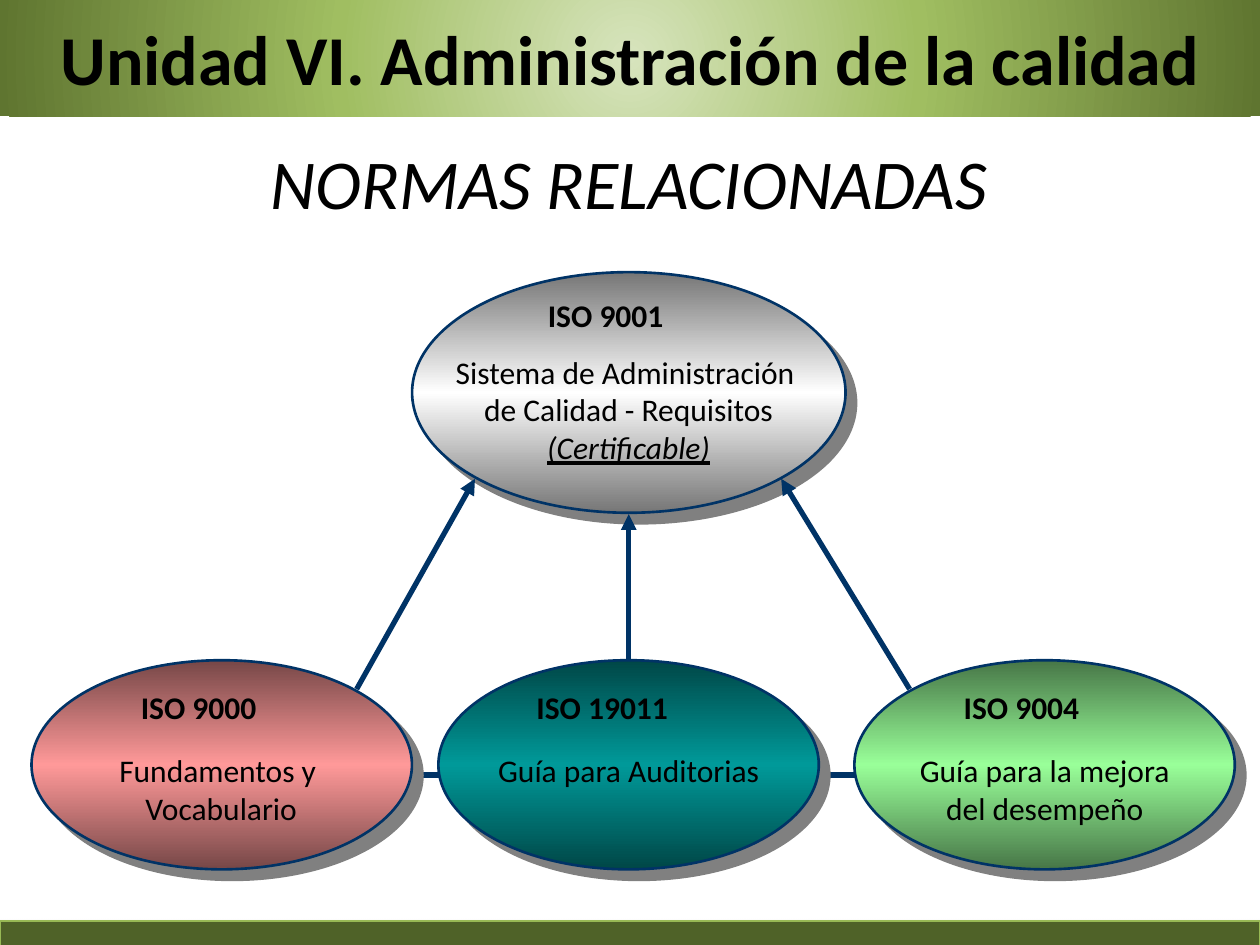
"""Build the slide on the ISO standards related to quality management."""
from dataclasses import dataclass

from pptx import Presentation
from pptx.dml.color import RGBColor
from pptx.enum.shapes import MSO_CONNECTOR, MSO_SHAPE
from pptx.enum.text import MSO_ANCHOR, PP_ALIGN
from pptx.oxml import parse_xml
from pptx.oxml.ns import nsdecls, qn
from pptx.util import Pt

Box = tuple[float, float, float, float]
Stops = tuple[tuple[int, str], ...]


@dataclass(frozen=True)
class Theme:
    font: str = "Calibri"
    text: str = "000000"
    navy: str = "003366"
    shadow: str = "808080"
    footer: str = "4F6228"
    footer_line: str = "98B955"
    banner: Stops = ((0, "D7E4BD"), (46, "A0BE61"), (100, "5F7530"))
    heading: int = 40
    body: int = 18


@dataclass(frozen=True)
class Norm:
    name: str
    lines: tuple[str, ...]
    oval: Box
    label: Box
    detail: Box
    edge: str
    middle: str
    certifiable: bool = False


T = Theme()
LINEAR = '<a:lin ang="5400000" scaled="0"/>'
RADIAL = '<a:path path="circle"><a:fillToRect l="50000" t="50000" r="50000" b="50000"/></a:path>'
OVAL_TOP, OVAL_W, OVAL_H = 377.3, 217.4, 119.5
LABEL_TOP, DETAIL_TOP = 389.5, 425.5

NORMS = (
    Norm("ISO 9001", ("Sistema de Administración ", "de Calidad - Requisitos", "(Certificable)"),
         (235.5, 155.5, 247.7, 137.5), (306, 165.6, 97, 31), (245.5, 198, 227.5, 72),
         "767676", "FFFFFF", True),
    Norm("ISO 9000", ("Fundamentos y ", "Vocabulario"),
         (18, OVAL_TOP, OVAL_W, OVAL_H), (73.4, LABEL_TOP, 97, 31),
         (56.2, DETAIL_TOP, 140.4, 50.4), "764747", "FF9999"),
    Norm("ISO 19011", ("Guía para Auditorias",),
         (250.5, OVAL_TOP, OVAL_W, OVAL_H), (299.5, LABEL_TOP, 108, 31),
         (270.7, DETAIL_TOP, 177.1, 28.8), "004747", "009999"),
    Norm("ISO 9004", ("Guía para la mejora", "del desempeño"),
         (488.2, OVAL_TOP, OVAL_W, OVAL_H), (543.6, LABEL_TOP, 97, 31),
         (512, DETAIL_TOP, 170, 50.4), "477647", "99FF99"),
)
ARROWS: tuple[Box, ...] = (
    (203.8, 393.8, 271.4, 273.6), (519.8, 393.8, 446.4, 273.6), (359.3, 376.6, 359.3, 293.8),
)


def points(values: Box) -> list[Pt]:
    """Turn four numbers into lengths in points."""
    return [Pt(v) for v in values]


def write(tf, lines: tuple[str, ...], size: int, align=PP_ALIGN.CENTER, **style: bool) -> None:
    """Write one paragraph per line in a common style."""
    tf.word_wrap = True
    for i, line in enumerate(lines):
        p = tf.paragraphs[0] if i == 0 else tf.add_paragraph()
        p.text, p.alignment = line, align
        p.font.name, p.font.size = T.font, Pt(size)
        p.font.color.rgb = RGBColor.from_string(T.text)
        for key, value in style.items():
            setattr(p.font, key, value)


def set_gradient(sp, stops: Stops, direction: str) -> None:
    """Fill a shape with a gradient of any number of stops."""
    sp.fill.background()
    gs = "".join(f'<a:gs pos="{pos * 1000}"><a:srgbClr val="{color}"/></a:gs>'
                 for pos, color in stops)
    fill = parse_xml(f'<a:gradFill {nsdecls("a")} rotWithShape="1">'
                     f'<a:gsLst>{gs}</a:gsLst>{direction}</a:gradFill>')
    spPr = sp.fill._xPr
    spPr.replace(spPr.find(qn("a:noFill")), fill)


def set_shadow(sp, color: str, alpha: int, blur: float, dist: float, angle: int) -> None:
    """Give a shape an outer shadow."""
    sp.shadow.inherit = False
    sp._element.spPr.find(qn("a:effectLst")).append(parse_xml(
        f'<a:outerShdw {nsdecls("a")} blurRad="{Pt(blur)}" dist="{Pt(dist)}" '
        f'dir="{angle * 60000}" algn="ctr" rotWithShape="0"><a:srgbClr val="{color}">'
        f'<a:alpha val="{alpha * 1000}"/></a:srgbClr></a:outerShdw>'))


def set_line(sp, color: str, width: float) -> None:
    """Set the line colour and width of a shape or connector."""
    sp.line.color.rgb = RGBColor.from_string(color)
    sp.line.width = Pt(width)


def add_link(shapes, ends: Box, arrow: bool = True) -> None:
    """Draw a straight link, with an arrowhead at its end if wanted."""
    c = shapes.add_connector(MSO_CONNECTOR.STRAIGHT, *points(ends))
    set_line(c, T.navy, 3)
    if arrow:
        c.line._get_or_add_ln().append(parse_xml(f'<a:tailEnd {nsdecls("a")} type="triangle"/>'))
    c._element.spPr.append(parse_xml(f'<a:effectLst {nsdecls("a")}/>'))


def add_norm(shapes, norm: Norm) -> None:
    """Draw the oval of a standard with its name and subject."""
    sp = shapes.add_shape(MSO_SHAPE.OVAL, *points(norm.oval))
    set_gradient(sp, ((0, norm.edge), (50, norm.middle), (100, norm.edge)), LINEAR)
    set_line(sp, T.navy, 1.5)
    set_shadow(sp, T.shadow, 100, 0, 8.5, 45)
    label = shapes.add_textbox(*points(norm.label))
    write(label.text_frame, (norm.name,), T.body, PP_ALIGN.LEFT, bold=True)
    tf = shapes.add_textbox(*points(norm.detail)).text_frame
    write(tf, norm.lines, T.body)
    if norm.certifiable:
        tf.paragraphs[-1].font.italic = tf.paragraphs[-1].font.underline = True


def add_bands(shapes) -> None:
    """Draw the banner with the unit name and the footer band."""
    sp = shapes.add_shape(MSO_SHAPE.RECTANGLE, *points((0, -0.5, 720, 67)))
    set_gradient(sp, T.banner, RADIAL)
    sp.line.fill.background()
    sp.shadow.inherit = False
    sp.text_frame.vertical_anchor = MSO_ANCHOR.MIDDLE
    write(sp.text_frame, ("Unidad VI. Administración de la calidad",), T.heading, bold=True)
    sp = shapes.add_shape(MSO_SHAPE.RECTANGLE, *points((0, 526.3, 720, 15.8)))
    sp.fill.solid()
    sp.fill.fore_color.rgb = RGBColor.from_string(T.footer)
    set_line(sp, T.footer_line, 0.75)
    set_shadow(sp, "000000", 35, 3.1, 1.8, 90)


def main() -> None:
    """Build and save the slide."""
    prs = Presentation()
    prs.slide_width, prs.slide_height = Pt(720), Pt(540)
    s = prs.slides.add_slide(prs.slide_layouts[5])
    title = s.shapes.title
    title.left, title.top, title.width, title.height = points((35.3, 59, 648, 90))
    title.text_frame.vertical_anchor = MSO_ANCHOR.MIDDLE
    write(title.text_frame, ("NORMAS RELACIONADAS",), T.heading, italic=True)
    diagram = s.shapes.add_group_shape().shapes
    add_link(diagram, (218.2, 442.8, 541.4, 442.8), arrow=False)
    for norm in NORMS:
        add_norm(diagram, norm)
    for ends in ARROWS:
        add_link(diagram, ends)
    add_bands(s.shapes)
    prs.save("out.pptx")


if __name__ == "__main__":
    main()
